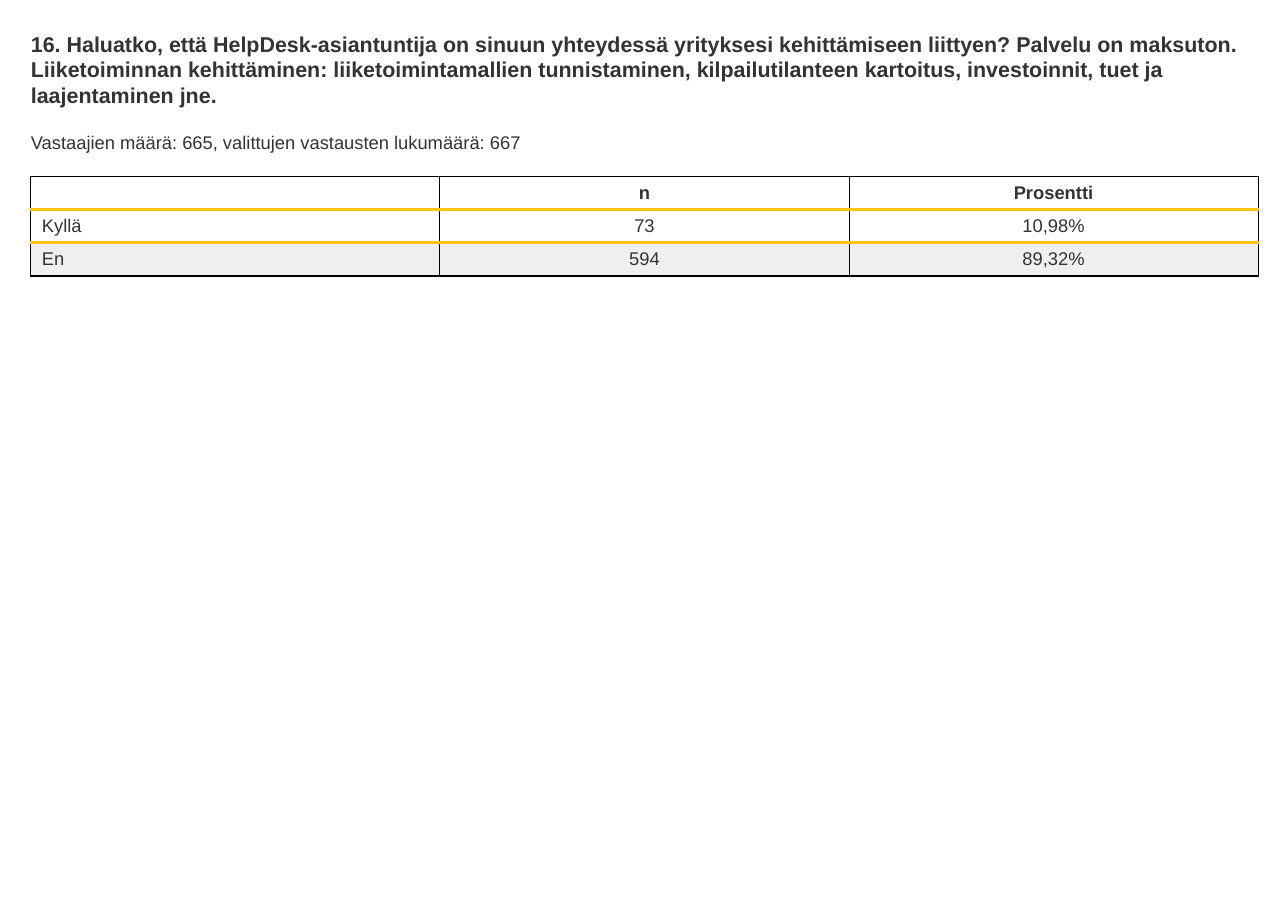
from lxml import etree
from pptx import Presentation
from pptx.dml.color import RGBColor
from pptx.enum.text import MSO_ANCHOR, MSO_AUTO_SIZE, PP_ALIGN
from pptx.oxml.ns import qn
from pptx.util import Inches, Pt

LEFT, CENTER = PP_ALIGN.LEFT, PP_ALIGN.CENTER
TOP, MIDDLE = MSO_ANCHOR.TOP, MSO_ANCHOR.MIDDLE
NO_AUTOFIT = MSO_AUTO_SIZE.NONE
TITLE_ONLY = 5

TEXT, WHITE, BAND, YELLOW, BLACK = "333333", "FFFFFF", "EFEFEF", "FFC311", "000000"
THIN, RULE, BASE = (BLACK, 0.75), (YELLOW, 2), (BLACK, 1.5)

QUESTION = (
    "16. Haluatko, että HelpDesk-asiantuntija on sinuun yhteydessä yrityksesi "
    "kehittämiseen liittyen? Palvelu on maksuton. Liiketoiminnan kehittäminen: "
    "liiketoimintamallien tunnistaminen, kilpailutilanteen kartoitus, investoinnit, "
    "tuet ja laajentaminen jne."
)
RESPONDENTS = "Vastaajien määrä: 665, valittujen vastausten lukumäärä: 667"
ANSWERS = [
    ("", "n", "Prosentti"),
    ("Kyllä", "73", "10,98%"),
    ("En", "594", "89,32%"),
]


def color(value):
    """Turn a hex string into a colour."""
    return RGBColor.from_string(value)


def apply(target, values):
    """Set each named attribute on the target."""
    for name, value in values.items():
        setattr(target, name, value)


class SurveyPage:
    """Hold the style and the current slide of a survey report."""

    font = "Arial"
    frame = {
        "margin_left": 0, "margin_right": 0, "margin_top": 0, "margin_bottom": 0,
        "word_wrap": True, "auto_size": NO_AUTOFIT, "vertical_anchor": TOP,
    }

    def __init__(self, deck):
        """Add a page to the deck."""
        self.page = deck.slides.add_slide(deck.slide_layouts[TITLE_ONLY])

    def fill_para(self, para, text, size, bold=False, align=LEFT):
        """Put one formatted span into a paragraph."""
        apply(para, {"alignment": align, "line_spacing": 1.0})
        if not text:
            etree.SubElement(para._p, qn("a:endParaRPr"), sz=str(size * 100))
            return
        span = para.add_run()
        span.text = text
        apply(span.font, {"name": self.font, "size": Pt(size), "bold": bold})
        span.font.color.rgb = color(TEXT)

    def title(self, text, left, top, width, height):
        """Place and format the title placeholder."""
        box = self.page.shapes.title
        apply(box, {"left": Inches(left), "top": Inches(top),
                    "width": Inches(width), "height": Inches(height)})
        apply(box.text_frame, self.frame)
        self.fill_para(box.text_frame.paragraphs[0], text, 14, bold=True)

    def text(self, text, left, top, width, height):
        """Add a text box."""
        box = self.page.shapes.add_textbox(
            Inches(left), Inches(top), Inches(width), Inches(height))
        apply(box.text_frame, self.frame)
        self.fill_para(box.text_frame.paragraphs[0], text, 12)

    def borders(self, cell, top, bottom):
        """Draw the four borders of a cell."""
        properties = cell._tc.get_or_add_tcPr()
        sides = {"a:lnL": THIN, "a:lnR": THIN, "a:lnT": top, "a:lnB": bottom}
        for position, (side, (value, width)) in enumerate(sides.items()):
            line = etree.Element(qn(side), w=str(Pt(width)))
            fill = etree.SubElement(line, qn("a:solidFill"))
            etree.SubElement(fill, qn("a:srgbClr"), val=value)
            properties.insert(position, line)

    def table(self, rows, left, top, width, row_height):
        """Add a table with a header row and ruled answers."""
        last = len(rows) - 1
        grid = self.page.shapes.add_table(
            len(rows), len(rows[0]), Inches(left), Inches(top),
            Inches(width), Inches(row_height * len(rows))).table
        for r, row in enumerate(rows):
            for c, text in enumerate(row):
                cell = grid.cell(r, c)
                cell.vertical_anchor = MIDDLE
                cell.fill.solid()
                cell.fill.fore_color.rgb = color(BAND if r and r % 2 == 0 else WHITE)
                self.borders(cell, RULE if r else THIN, BASE if r == last else RULE)
                self.fill_para(cell.text_frame.paragraphs[0], text, 12,
                               bold=r == 0, align=CENTER if c else LEFT)


def main():
    """Build and save the survey slide."""
    deck = Presentation()
    apply(deck, {"slide_width": Inches(11.69), "slide_height": Inches(8.27)})
    survey = SurveyPage(deck)
    survey.title(QUESTION, 0.28, 0.28, 11.15, 0.7)
    survey.text(RESPONDENTS, 0.28, 1.19, 11.15, 0.2)
    survey.table(ANSWERS, 0.28, 1.6, 11.14, 0.3)
    deck.save("out.pptx")


if __name__ == "__main__":
    main()
